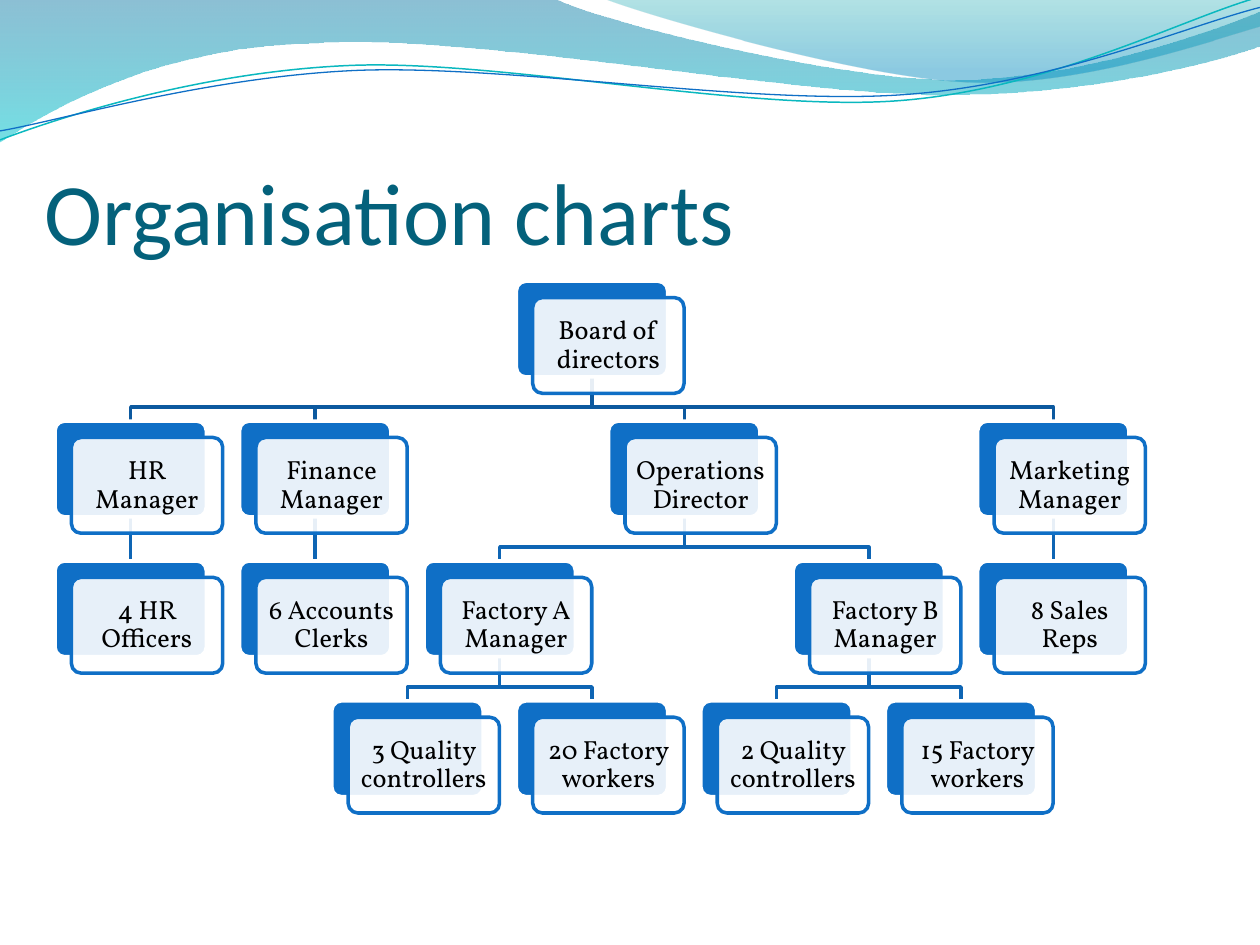
import math

import pptx
import pptx.dml.color
import pptx.enum.shapes
import pptx.enum.text
import pptx.oxml.ns
import pptx.util
from lxml import etree

Cm = pptx.util.Cm
Pt = pptx.util.Pt
qn = pptx.oxml.ns.qn
RGB = pptx.dml.color.RGBColor.from_string
MIDDLE = pptx.enum.text.MSO_ANCHOR.MIDDLE
CENTER = pptx.enum.text.PP_ALIGN.CENTER

COLORS = {
    "title": "04617B", "text": "000000", "white": "FFFFFF", "blue": "0F6FC6",
    "teal": "0AB8BF", "top_link": "0C599F", "link": "0E65B4",
    "deep": "0074A1", "aqua": "00C6CF", "mint": "00A1A9", "sky": "008BBF",
}

WAVES = [
    ([(0, 0), (11.18, -0.03), (12.09, 0.43, 16.87, 1.6, 19.25, 1.6),
      (21.67, 1.6, 24.33, 0.66, 25.4, 0.23), (25.43, 0.91),
      (24.97, 1.12, 22.1, 1.93, 18.95, 1.91), (15.8, 1.9, 9.7, 0.71, 6.53, 0.86),
      (3.25, 0.91, 1.17, 2.11, -0.03, 2.87), (0, 0)],
     [(0, "deep", 45), (1, "aqua", 55)]),
    ([(12.17, -0.03), (12.93, 0.28, 17.32, 1.57, 19.53, 1.65),
      (21.74, 1.75, 24.41, 0.81, 25.4, 0.53), (25.4, 0), (12.17, -0.03)],
     [(0, "mint", 30), (0.8, "sky", 45)]),
]
TILT = 357.3
RIPPLES = [
    ([(0, 2.82), (1.22, 2.36, 4.01, 1.45, 7.04, 1.32),
      (10.03, 1.19, 15.06, 2.26, 18.11, 2.03),
      (21.16, 1.8, 23.83, 0.38, 25.35, -0.05)], (12.67, 1.46), "teal", 0.85),
    ([(0, 2.64), (1.19, 2.44, 4.17, 1.55, 7.19, 1.42),
      (10.24, 1.3, 15.16, 2.13, 18.21, 1.91),
      (21.23, 1.7, 23.9, 0.53, 25.4, 0.15)], (12.69, 1.5), "blue", 0.75),
]

ROLES = {
    "Board of directors": (2.5, 0, None),
    "HR Manager": (0, 1, "Board of directors"),
    "4 HR Officers": (0, 2, "HR Manager"),
    "Finance Manager": (1, 1, "Board of directors"),
    "6 Accounts Clerks": (1, 2, "Finance Manager"),
    "Operations Director": (3, 1, "Board of directors"),
    "Factory A Manager": (2, 2, "Operations Director"),
    "3 Quality controllers": (1.5, 3, "Factory A Manager"),
    "20 Factory workers": (2.5, 3, "Factory A Manager"),
    "Factory B Manager": (4, 2, "Operations Director"),
    "2 Quality controllers": (3.5, 3, "Factory B Manager"),
    "15 Factory workers": (4.5, 3, "Factory B Manager"),
    "Marketing Manager": (5, 1, "Board of directors"),
    "8 Sales Reps": (5, 2, "Marketing Manager"),
}
PITCH_X, PITCH_Y = 3.72, 2.82
CARD_W, CARD_H, OFFSET, BUS = 3.05, 1.93, 0.33, 0.61
STEM_W = 0.25


def apply(obj, values):
    for name, value in values.items():
        setattr(obj, name, value)


def set_alpha(parent, percent):
    clr = parent.find(".//" + qn("a:srgbClr"))
    etree.SubElement(clr, qn("a:alpha"), val=str(percent * 1000))


def set_line(sp, color, width):
    sp.line.color.rgb = RGB(COLORS[color])
    sp.line.width = Pt(width)


def turn(path, center, degrees):
    cos, sin = math.cos(math.radians(degrees)), math.sin(math.radians(degrees))
    turned = []
    for seg in path:
        flat = []
        for x, y in zip(seg[::2], seg[1::2]):
            dx, dy = x - center[0], y - center[1]
            flat += [center[0] + cos * dx - sin * dy, center[1] + sin * dx + cos * dy]
        turned.append(tuple(flat))
    return turned


def add_outline(s, path, left=0, top=0, close=False):
    pts = [(Cm(left + x), Cm(top + y)) for seg in path for x, y in zip(seg[::2], seg[1::2])]
    builder = s.shapes.build_freeform(*pts[0])
    builder.add_line_segments(pts[1:], close=close)
    sp = builder.convert_to_shape()
    sp.shadow.inherit = False
    if not close:
        sp.fill.background()
    lines = iter(sp.element.spPr.findall(".//" + qn("a:lnTo")))
    for seg in path[1:]:
        first = next(lines)
        if len(seg) == 6:
            first.tag
            curve = etree.Element(qn("a:cubicBezTo"))
            first.addprevious(curve)
            for line in (first, next(lines), next(lines)):
                curve.append(line[0])
                line.getparent().remove(line)
    return sp


def add_stem(s, x, top, bottom):
    sp = add_outline(s, [(x, top), (x, bottom)])
    apply(sp, {"left": Cm(x - STEM_W / 2), "width": Cm(STEM_W)})
    sp.element.spPr.find(".//" + qn("a:path")).set("w", str(Cm(STEM_W)))
    for pt in sp.element.spPr.iter(qn("a:pt")):
        pt.set("x", str(Cm(STEM_W / 2)))
    return sp


def add_waves(s, left, top):
    for path, stops in WAVES:
        sp = add_outline(s, path, left, top, close=True)
        sp.line.fill.background()
        sp.fill.gradient()
        sp.fill.gradient_angle = 270
        elements = sp.element.spPr.findall(".//" + qn("a:gs"))
        for stop, gs, (position, color, alpha) in zip(sp.fill.gradient_stops, elements, stops):
            stop.position = position
            stop.color.rgb = RGB(COLORS[color])
            set_alpha(gs, alpha)
    for path, center, color, width in RIPPLES:
        sp = add_outline(s, turn(path, center, 360 - TILT), left, top)
        sp.rotation = TILT
        set_line(sp, color, width)


def add_title(s, left, top, width, height):
    sp = s.shapes.title
    sp.element.getparent().append(sp.element)
    apply(sp, {"left": Cm(left), "top": Cm(top), "width": Cm(width), "height": Cm(height)})
    apply(sp.text_frame, {
        "text": "Organisation charts", "margin_left": 0, "margin_right": 0,
        "margin_top": Cm(0.13), "margin_bottom": 0, "word_wrap": True,
        "auto_size": pptx.enum.text.MSO_AUTO_SIZE.NONE,
        "vertical_anchor": pptx.enum.text.MSO_ANCHOR.BOTTOM})
    p = sp.text_frame.paragraphs[0]
    p.alignment = pptx.enum.text.PP_ALIGN.LEFT
    apply(p.runs[0].font, {"size": Pt(50), "name": "Calibri"})
    p.runs[0].font.color.rgb = RGB(COLORS["title"])


def add_plate(s, left, top, fill, line):
    sp = s.shapes.add_shape(pptx.enum.shapes.MSO_SHAPE.ROUNDED_RECTANGLE,
                            Cm(left), Cm(top), Cm(CARD_W), Cm(CARD_H))
    sp.shadow.inherit = False
    sp.adjustments[0] = 0.1
    sp.fill.solid()
    sp.fill.fore_color.rgb = RGB(COLORS[fill])
    set_line(sp, line, 2)
    return sp


def add_card(s, text, left, top):
    add_plate(s, left, top, "blue", "white")
    front = add_plate(s, left + OFFSET, top + OFFSET, "white", "blue")
    set_alpha(front.element.spPr.find(qn("a:solidFill")), 90)
    margins = {"margin_" + side: Cm(0.15) for side in ("left", "top", "right", "bottom")}
    apply(front.text_frame, {"text": text, "word_wrap": True,
                             "vertical_anchor": MIDDLE, **margins})
    p = front.text_frame.paragraphs[0]
    apply(p, {"alignment": CENTER, "line_spacing": 0.9})
    apply(p.runs[0].font, {"size": Pt(15), "name": "Vollkorn"})
    p.runs[0].font.color.rgb = RGB(COLORS["text"])


def add_org_chart(s, left, top):
    corners = {role: (left + col * PITCH_X, top + row * PITCH_Y)
               for role, (col, row, _) in ROLES.items()}
    for role, (col, row, boss) in reversed(list(ROLES.items())):
        if boss is None:
            continue
        x1, y1 = corners[boss][0] + CARD_W / 2, corners[boss][1] + CARD_H
        x2, y2 = corners[role][0] + CARD_W / 2, corners[role][1]
        if col == ROLES[boss][0]:
            link = add_stem(s, x1, y1, y2)
        else:
            link = add_outline(s, [(x1, y1), (x1, y1 + BUS), (x2, y1 + BUS), (x2, y2)])
        set_line(link, "top_link" if row == 1 else "link", 2)
    for role, corner in corners.items():
        add_card(s, role, *corner)


def main():
    prs = pptx.Presentation()
    apply(prs, {"slide_width": Cm(25.4), "slide_height": Cm(19.05)})
    s = prs.slides.add_slide(prs.slide_layouts[5])
    add_waves(s, 0, 0)
    add_title(s, 0.89, 2.13, 22.86, 3.18)
    add_org_chart(s, 1.11, 5.67)
    prs.save("out.pptx")


if __name__ == "__main__":
    main()
